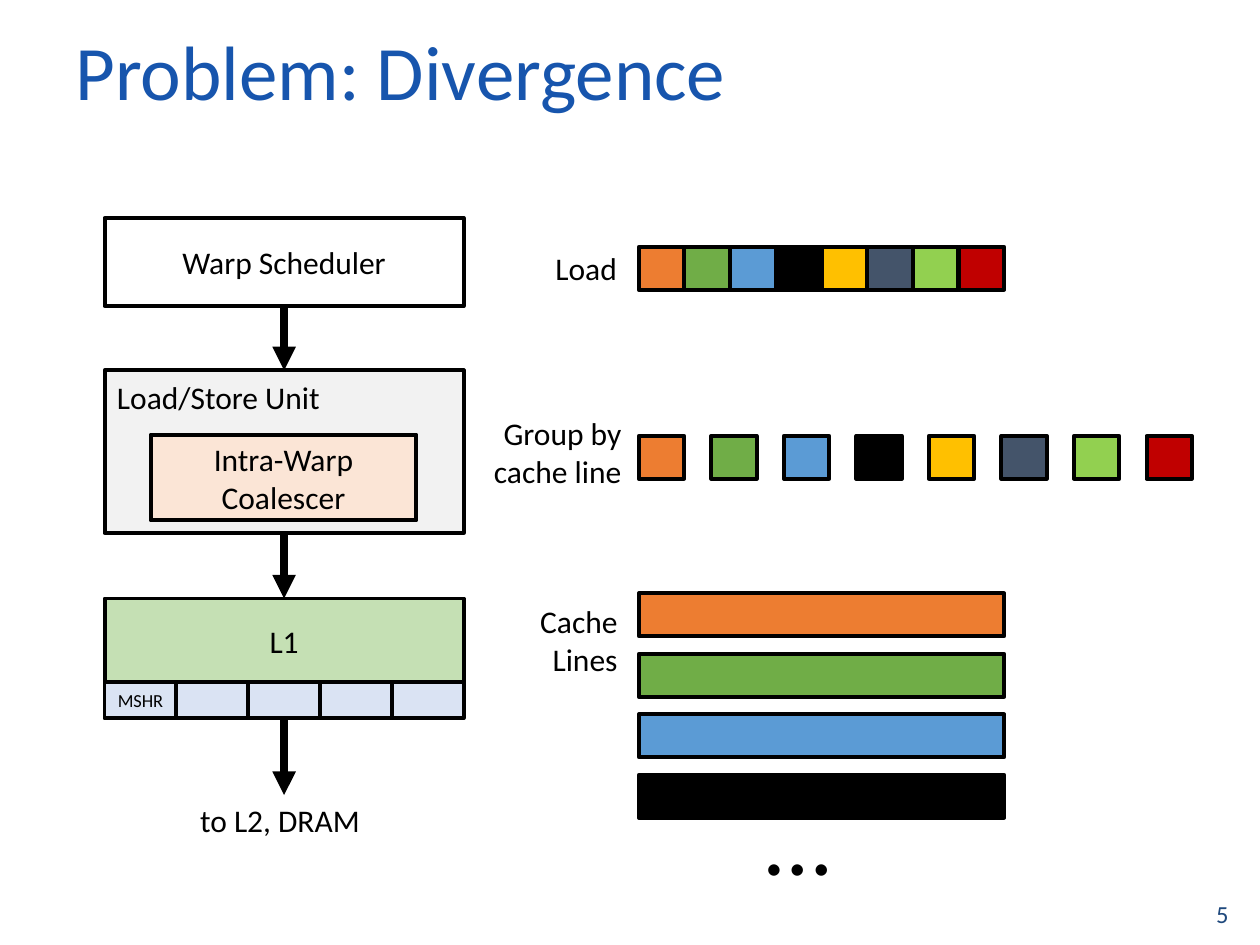
from lxml import etree
from pptx import Presentation
from pptx.dml.color import RGBColor as RGB
from pptx.enum.shapes import MSO_CONNECTOR as Conn, MSO_SHAPE as Kind
from pptx.enum.text import MSO_ANCHOR as Anchor, PP_ALIGN as Align
from pptx.oxml.ns import qn
from pptx.util import Inches, Pt

INK = "000000"
HUES = ["ED7D31", "70AD47", "5B9BD5", INK,
        "FFC000", "44546A", "92D050", "C00000"]
CELL_W, CELL_H = 0.36, 0.34


def color(code):
    return RGB.from_string(code)


def write(frame, text, size, code, align, anchor):
    frame.word_wrap = True
    frame.vertical_anchor = anchor
    para = frame.paragraphs[0]
    para.alignment = align
    run = para.add_run()
    run.text = text
    run.font.name = "Calibri"
    run.font.size = Pt(size)
    run.font.color.rgb = color(code)


def label(slide, box, text, size=18, code=INK, align=Align.LEFT,
          anchor=Anchor.TOP):
    area = slide.shapes.add_textbox(*map(Inches, box))
    write(area.text_frame, text, size, code, align, anchor)


def block(slide, box, fill, text="", size=18):
    shape = slide.shapes.add_shape(Kind.RECTANGLE, *map(Inches, box))
    shape.shadow.inherit = False
    shape.fill.solid()
    shape.fill.fore_color.rgb = color(fill)
    shape.line.color.rgb = color(INK)
    shape.line.width = Pt(2.25)
    if text:
        write(shape.text_frame, text, size, INK, Align.CENTER, Anchor.MIDDLE)


def arrow(slide, x, top, end):
    line = slide.shapes.add_connector(
        Conn.STRAIGHT, Inches(x), Inches(top), Inches(x), Inches(end))
    line.line.color.rgb = color(INK)
    line.line.width = Pt(4.5)
    etree.SubElement(line.line._get_or_add_ln(), qn("a:tailEnd"),
                     type="triangle")
    etree.SubElement(line._element.spPr, qn("a:effectLst"))


def header(slide, x, y, w, h):
    label(slide, (x, y, w, h), "Problem: Divergence", 44, "1755AD",
          anchor=Anchor.MIDDLE)


def footer(slide, x, y, w, h):
    label(slide, (x, y, w, h), "5", 14, "1F497D", Align.RIGHT, Anchor.MIDDLE)


def pipeline(slide, x, y, w):
    """Stack of hardware units joined by arrows."""
    mid = x + w / 2
    unit, cache = y + 1.21, y + 3.02

    # Load/store unit and scheduler
    block(slide, (x, unit, w, 1.29), "F2F2F2")
    block(slide, (x, y, w, 0.7), "FFFFFF", "Warp Scheduler")
    block(slide, (mid - 1.06, unit + 0.51, 2.11, 0.68), "FBE5D6",
          "Intra-Warp Coalescer")
    label(slide, (x, unit + 0.01, w, 0.4), "Load/Store Unit")

    # Flow between the units
    for top, end in ((y + 0.7, unit), (unit + 1.29, cache),
                     (cache + 0.68, cache + 1.56)):
        arrow(slide, mid, top, end)
    label(slide, (x + 0.66, cache + 1.56, 1.66, 0.4), "to L2, DRAM")

    # Cache with its row of miss registers
    block(slide, (x, cache, w, 0.68), "C5E0B4", "L1")
    step = w / 5
    for i in range(5):
        block(slide, (x + i * step, cache + 0.66, step, 0.29), "DAE3F3",
              "" if i else "MSHR", 10.5)


def cells(slide, x, y, w):
    """Row of coloured cells spread evenly over the width."""
    step = (w - CELL_W) / (len(HUES) - 1)
    for i, hue in enumerate(HUES):
        block(slide, (x + i * step, y, CELL_W, CELL_H), hue)


def lines(slide, x, y, w):
    """Full-width cache lines, with more to follow."""
    for i, hue in enumerate(HUES[:4]):
        block(slide, (x, y + i * 0.48, w, CELL_H), hue)
    label(slide, (x + 0.91, y + 1.44, 2.15, 1.01), "…", 54)


def example(slide, x, y):
    """Labelled steps of one divergent load."""
    label(slide, (x - 0.76, y - 0.03, 0.79, 0.4), "Load")
    cells(slide, x, y, 2.9)
    label(slide, (x - 1.35, y + 1.28, 1.31, 0.71), "Group by cache line",
          align=Align.RIGHT)
    cells(slide, x, y + 1.5, 4.39)
    label(slide, (x - 0.94, y + 2.77, 0.87, 0.71), "Cache Lines",
          align=Align.RIGHT)
    lines(slide, x, y + 2.75, 2.9)


def main():
    deck = Presentation()
    deck.slide_width, deck.slide_height = Inches(10), Inches(7.5)
    slide = deck.slides.add_slide(deck.slide_layouts[6])
    header(slide, 0.5, 0.09, 9, 0.92)
    footer(slide, 7.52, 7.05, 2.33, 0.4)
    pipeline(slide, 0.83, 1.73, 2.85)
    example(slide, 5.07, 1.96)
    deck.save("out.pptx")


if __name__ == "__main__":
    main()
